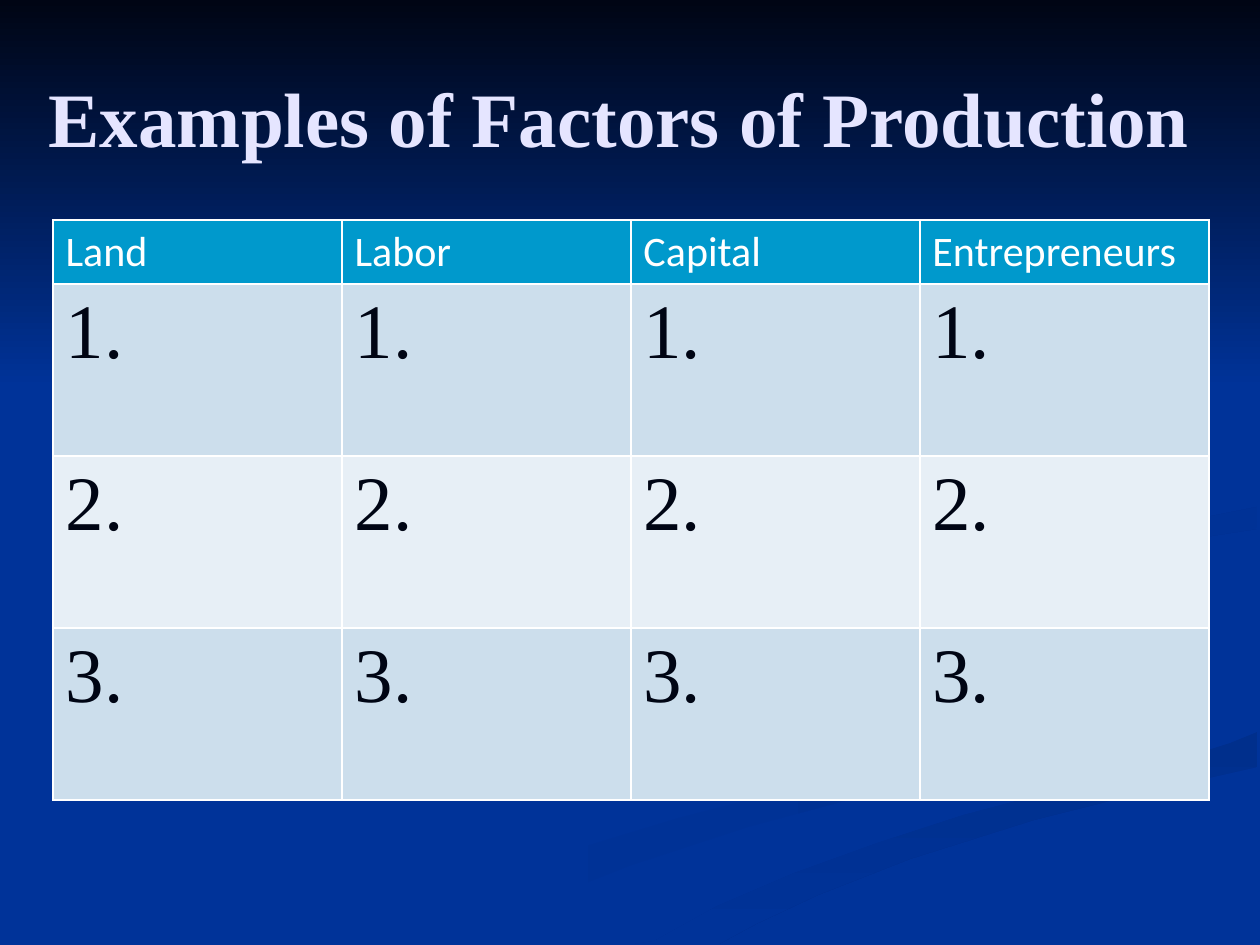
from lxml import etree
from pptx import Presentation, util as u
from pptx.dml.color import RGBColor
from pptx.enum import shapes, text
from pptx.oxml.ns import qn

PX = 914400 / 126
WIDTH, HEIGHT = 1260, 945

BLUE = RGBColor(0x00, 0x33, 0x99)
NIGHT = RGBColor(0x00, 0x05, 0x14)
SHADE_LIGHT = RGBColor(0x00, 0x31, 0x93)
SHADE_MID = RGBColor(0x00, 0x30, 0x91)
SHADE_DEEP = RGBColor(0x00, 0x2F, 0x8E)
SHADE_DARK = RGBColor(0x00, 0x2F, 0x8C)
LAVENDER = RGBColor(0xE5, 0xE5, 0xFF)
WHITE = RGBColor(0xFF, 0xFF, 0xFF)
HEADER = RGBColor(0x00, 0x99, 0xCC)
BANDS = [RGBColor(0xCC, 0xDE, 0xEC), RGBColor(0xE7, 0xEF, 0xF6)]

SERIF, SANS = "Times New Roman", "Calibri"
FACTORS = ["Land", "Labor", "Capital", "Entrepreneurs"]
EXAMPLES = 3

# Edges shared by neighbouring ribbons
CREST = [(924, 609), (955, 627), (1022, 649), (1096, 668), (1158, 689),
         (1183, 708), (1188, 718)]
SLOPE = [(654, 941), (717, 906), (794, 873), (877, 843), (963, 815),
         (1092, 781), (1179, 759), (1230, 743), (1257, 732)]
BEND = [(989, 571), (1021, 551), (1071, 538), (1176, 523), (1257, 507)]

# Ribbons, back to front: outline, first colour, last colour, clockwise angle
RIBBONS = [
    ([(724, 580), (718, 592), (738, 614), (795, 636), (878, 662), (948, 684),
      (984, 701), (990, 713), (983, 730), (944, 748), (881, 767), (776, 793),
      (679, 818), (577, 849), (474, 891), (378, 944), (455, 944), (543, 900),
      (629, 866), (748, 827), (852, 799), (932, 779), (983, 762), (1002, 746),
      (1008, 732), (1002, 714), (984, 697), (939, 678), (859, 654), (789, 633),
      (740, 606), (723, 585)], BLUE, SHADE_LIGHT, 0),
    ([(912, 585), *CREST, (1186, 732), (1166, 747), (1126, 762), (1148, 747),
      (1157, 732), (1148, 714), (1124, 697), (1056, 675), (984, 653),
      (940, 630), (916, 604)], BLUE, SHADE_LIGHT, 45),
    ([(634, 944), (719, 944), (756, 924), (818, 895), (910, 859), (1034, 820),
      (1138, 794), (1257, 767), *reversed(SLOPE)], SHADE_DARK, BLUE, 90),
    ([(914, 585), *CREST, (1179, 740), (1148, 756), (1095, 770), (983, 799),
      (887, 825), (780, 862), (663, 912), (601, 944), (634, 944), *SLOPE,
      (1259, 678), (1208, 669), (1139, 654), (1068, 634), (1013, 611),
      (985, 587), *BEND, (1259, 488), (1187, 503), (1072, 518), (993, 532),
      (951, 544), (922, 562)], BLUE, BLUE, 0),
    ([(984, 580), (990, 597), (1016, 614), (1041, 625), (1019, 610),
      (1014, 595), (1028, 578), (1062, 564), (1106, 553), (1179, 541),
      (1257, 529), *reversed(BEND)], SHADE_MID, BLUE, 45),
    ([(861, 542), (963, 525), (1040, 507), (1092, 484), (1120, 456),
      (1126, 433), (1116, 398), (1089, 367), (1034, 329), (960, 294),
      (1014, 320), (1066, 352), (1104, 386), (1120, 422), (1104, 454),
      (1061, 476), (961, 501), (852, 522), (788, 537), (742, 556), (727, 582),
      (743, 610), (784, 630), (752, 605), (748, 586), (774, 564), (818, 549)],
     SHADE_DEEP, BLUE, 45),
]


def px(n):
    return u.Emu(round(n * PX))


def paint(sp, first, last, angle):
    """Fill with one colour or a gradient, without line or shadow."""
    sp.shadow.inherit = False
    sp.line.fill.background()
    if first == last:
        sp.fill.solid()
        sp.fill.fore_color.rgb = first
        return
    sp.fill.gradient()
    sp.fill.gradient_angle = (360 - angle) % 360
    for stop, color in zip(sp.fill.gradient_stops, (first, last)):
        stop.color.rgb = color


def add_ribbon(s, points, first, last, angle):
    builder = s.shapes.build_freeform(*points[0], scale=PX)
    builder.add_line_segments(points[1:], close=True)
    paint(builder.convert_to_shape(), first, last, angle)


def set_font(p, name, size, color, bold=False):
    p.font.name, p.font.size, p.font.bold = name, u.Pt(size), bold
    p.font.color.rgb = color


def add_title(s, title):
    sp = s.shapes.add_textbox(px(21), px(38), px(1197), px(157))
    tf = sp.text_frame
    tf.word_wrap = True
    tf.vertical_anchor = text.MSO_ANCHOR.MIDDLE
    p = tf.paragraphs[0]
    p.text, p.alignment = title, text.PP_ALIGN.CENTER
    set_font(p, SERIF, 44, LAVENDER, bold=True)


def add_borders(cell):
    tc_pr = cell._tc.get_or_add_tcPr()
    for side in ("lnL", "lnR", "lnT", "lnB"):
        ln = etree.SubElement(tc_pr, qn(f"a:{side}"), w=str(u.Pt(1)))
        fill = etree.SubElement(ln, qn("a:solidFill"))
        etree.SubElement(fill, qn("a:srgbClr"), val=str(WHITE))


def fill_cell(cell, label, color):
    add_borders(cell)
    cell.fill.solid()
    cell.fill.fore_color.rgb = color
    p = cell.text_frame.paragraphs[0]
    p.text = label
    return p


def add_factor_table(s):
    table = s.shapes.add_table(EXAMPLES + 1, len(FACTORS), px(53), px(220),
                               px(1156), px(580)).table
    for row, height in zip(table.rows, [64] + [172] * EXAMPLES):
        row.height = px(height)
    for col, factor in enumerate(FACTORS):
        table.columns[col].width = px(289)
        set_font(fill_cell(table.cell(0, col), factor, HEADER), SANS, 24, WHITE)
        for n in range(1, EXAMPLES + 1):
            p = fill_cell(table.cell(n, col), f"{n}.", BANDS[(n - 1) % 2])
            set_font(p, SERIF, 44, NIGHT)
            p_pr = p._p.get_or_add_pPr()
            p_pr.set("marL", str(px(102)))
            p_pr.set("indent", str(-px(102)))


def main():
    prs = Presentation()
    prs.slide_width, prs.slide_height = px(WIDTH), px(HEIGHT)
    s = prs.slides.add_slide(prs.slide_layouts[6])

    # Background with ribbons and a dark sky
    s.background.fill.solid()
    s.background.fill.fore_color.rgb = BLUE
    for ribbon in RIBBONS:
        add_ribbon(s, *ribbon)
    sky = s.shapes.add_shape(shapes.MSO_SHAPE.RECTANGLE, 0, 0, px(WIDTH), px(388))
    paint(sky, NIGHT, BLUE, 90)

    # Content
    add_title(s, "Examples of Factors of Production")
    add_factor_table(s)
    prs.save("out.pptx")


if __name__ == "__main__":
    main()
